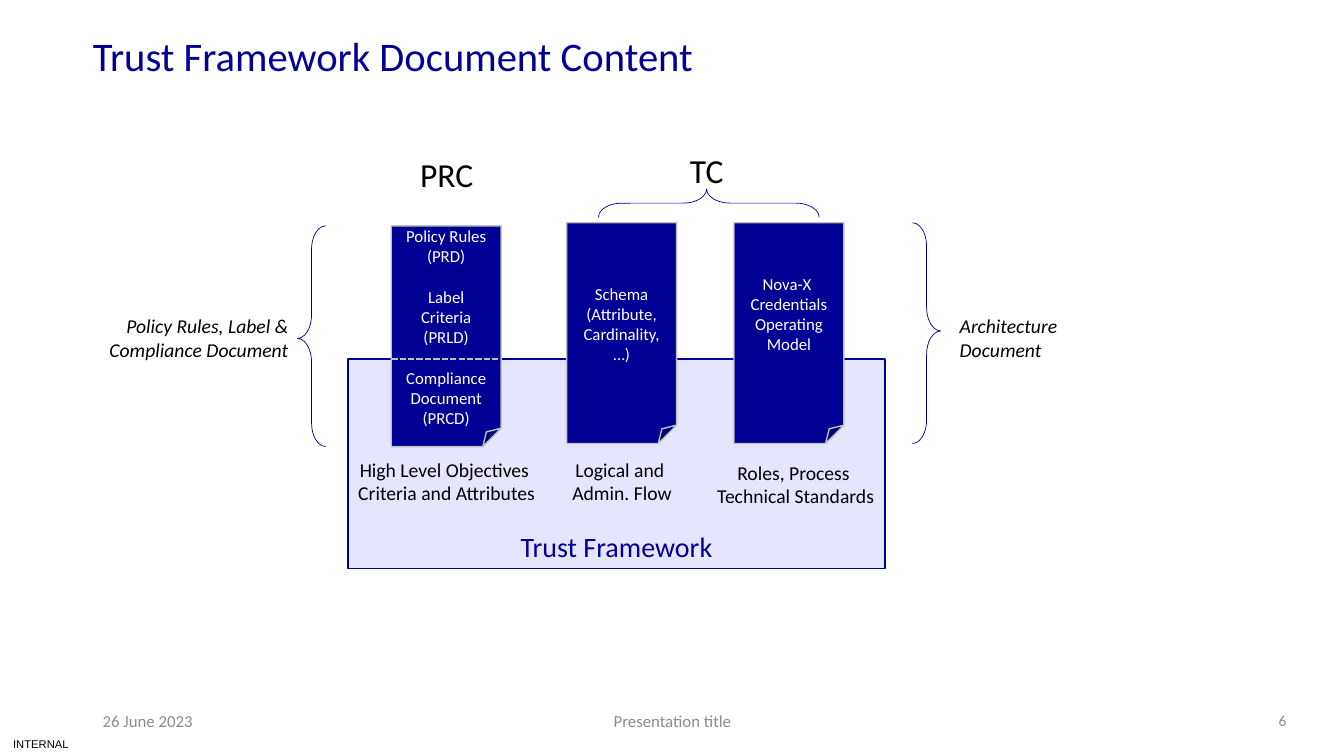
import lxml.etree
import pptx
import pptx.dml.color
import pptx.enum.dml
import pptx.enum.shapes
import pptx.enum.text
import pptx.oxml.ns
import pptx.util

EMU_PER_PX = 9144  # 100 px to the inch
NAVY, LAVENDER, SILVER, GREY = "000094", "E5E5FF", "BFBFBF", "8C8C8C"
WHITE, BLACK = "FFFFFF", "000000"
ALIGN = pptx.enum.text.PP_ALIGN
ANCHOR = pptx.enum.text.MSO_ANCHOR
SHAPE = pptx.enum.shapes.MSO_SHAPE
DEFAULT_INSETS = (10, 5, 10, 5)


def px(length):
    return pptx.util.Emu(length * EMU_PER_PX)


def color(hex_string):
    return pptx.dml.color.RGBColor.from_string(hex_string)


class SlideBuilder:
    font = "Calibri"

    def __init__(self, slide):
        self.slide = slide

    def fill_text(self, shape, lines, size, hex_string, align=ALIGN.LEFT, anchor=ANCHOR.TOP,
                  insets=DEFAULT_INSETS, wrap=True, italic=False, font=None,
                  spacing=None, gaps=None):
        """Fill a shape with one paragraph per line; gaps maps a line index to points before it."""
        frame = shape.text_frame
        frame.auto_size = pptx.enum.text.MSO_AUTO_SIZE.NONE
        frame.word_wrap = wrap
        frame.vertical_anchor = anchor
        (frame.margin_left, frame.margin_top,
         frame.margin_right, frame.margin_bottom) = map(px, insets)
        for index, line in enumerate(lines):
            paragraph = frame.add_paragraph() if index else frame.paragraphs[0]
            paragraph.alignment = align
            if spacing:
                paragraph.line_spacing = spacing
            if gaps and index in gaps:
                paragraph.space_before = pptx.util.Pt(gaps[index])
            run = paragraph.add_run()
            run.text = line
            run.font.name = font or self.font
            run.font.size = pptx.util.Pt(size)
            run.font.italic = italic
            run.font.color.rgb = color(hex_string)

    def title(self, box, line):
        shape = self.slide.shapes.title
        shape.left, shape.top, shape.width, shape.height = map(px, box)
        self.fill_text(shape, [line], 29, NAVY, insets=(0, 0, 0, 5), spacing=0.9)

    def text(self, box, lines, size, hex_string=BLACK, **style):
        shape = self.slide.shapes.add_textbox(*map(px, box))
        self.fill_text(shape, lines, size, hex_string, **style)

    def shape(self, kind, box, fill, line, width):
        shape = self.slide.shapes.add_shape(kind, *map(px, box))
        shape.shadow.inherit = False
        if fill:
            shape.fill.solid()
            shape.fill.fore_color.rgb = color(fill)
        else:
            shape.fill.background()
        shape.line.color.rgb = color(line)
        shape.line.width = pptx.util.Pt(width)
        return shape

    def document(self, left, top, lines, **style):
        shape = self.shape(SHAPE.FOLDED_CORNER, (left, top, 109, 219), NAVY, SILVER, 1)
        self.fill_text(shape, lines, 12, WHITE, align=ALIGN.CENTER, anchor=ANCHOR.MIDDLE, **style)

    def brace(self, left, top, rotation=0):
        shape = self.shape(SHAPE.LEFT_BRACE, (left, top, 28, 219), None, NAVY, 0.5)
        shape.adjustments[0] = 0.84
        shape.adjustments[1] = 0.51
        shape.rotation = rotation

    def dashed_line(self, start, end):
        line = self.slide.shapes.add_connector(
            pptx.enum.shapes.MSO_CONNECTOR.STRAIGHT, *map(px, start + end))
        line.line.color.rgb = color(SILVER)
        line.line.width = pptx.util.Pt(1.5)
        line.line.dash_style = pptx.enum.dml.MSO_LINE.SQUARE_DOT
        lxml.etree.SubElement(line._element.spPr, pptx.oxml.ns.qn("a:effectLst"))


def main():
    presentation = pptx.Presentation()
    presentation.slide_width, presentation.slide_height = px(1333), px(750)
    builder = SlideBuilder(presentation.slides.add_slide(presentation.slide_layouts[5]))

    builder.title((92, 36, 971, 83), "Trust Framework Document Content")
    framework = builder.shape(SHAPE.RECTANGLE, (345, 356, 533, 208), LAVENDER, NAVY, 1)
    builder.fill_text(framework, ["Trust Framework"], 20, NAVY,
                      align=ALIGN.CENTER, anchor=ANCHOR.BOTTOM)

    builder.document(388, 224, ["Policy Rules (PRD)", "Label Criteria", "(PRLD)",
                                "Compliance Document", "(PRCD)"], gaps={1: 14.6, 3: 14.6})
    builder.document(562, 221, ["Schema", "(Attribute, Cardinality, …)"])
    builder.document(728, 221, ["Nova-X ", "Credentials", "Operating", "Model"],
                     insets=(10, 5, 10, 25))
    builder.dashed_line((388, 356), (497, 356))

    builder.brace(295, 224)
    builder.brace(905, 221, rotation=180)
    builder.brace(689, 92, rotation=90)

    for left, top, heading in ((396, 148, "PRC"), (654, 144, "TC")):
        builder.text((left, top, 94, 50), [heading], 24, align=ALIGN.CENTER)

    captions = (
        ((344, 449, 198, 57), ["High Level Objectives ", "Criteria and Attributes"]),
        ((557, 449, 120, 57), ["Logical and ", "Admin. Flow"]),
        ((696, 452, 182, 57), ["Roles, Process", " Technical Standards"]),
    )
    for box, lines in captions:
        builder.text(box, lines, 14, align=ALIGN.CENTER, wrap=False)

    builder.text((92, 307, 204, 57), ["Policy Rules, Label & Compliance Document"], 14,
                 align=ALIGN.RIGHT, italic=True)
    builder.text((942, 307, 126, 57), ["Architecture Document"], 14, italic=True)

    builder.text((92, 695, 300, 40), ["26 June 2023"], 12, GREY, anchor=ANCHOR.MIDDLE)
    builder.text((442, 695, 450, 40), ["Presentation title"], 12, GREY,
                 align=ALIGN.CENTER, anchor=ANCHOR.MIDDLE)
    builder.text((1220, 697, 56, 40), ["6"], 11, GREY, align=ALIGN.RIGHT,
                 anchor=ANCHOR.MIDDLE, insets=(0, 0, 0, 5))
    builder.text((0, 726, 81, 24), ["INTERNAL"], 8, font="Arial",
                 anchor=ANCHOR.MIDDLE, insets=(13, 0, 0, 0))

    presentation.save("out.pptx")


if __name__ == "__main__":
    main()
